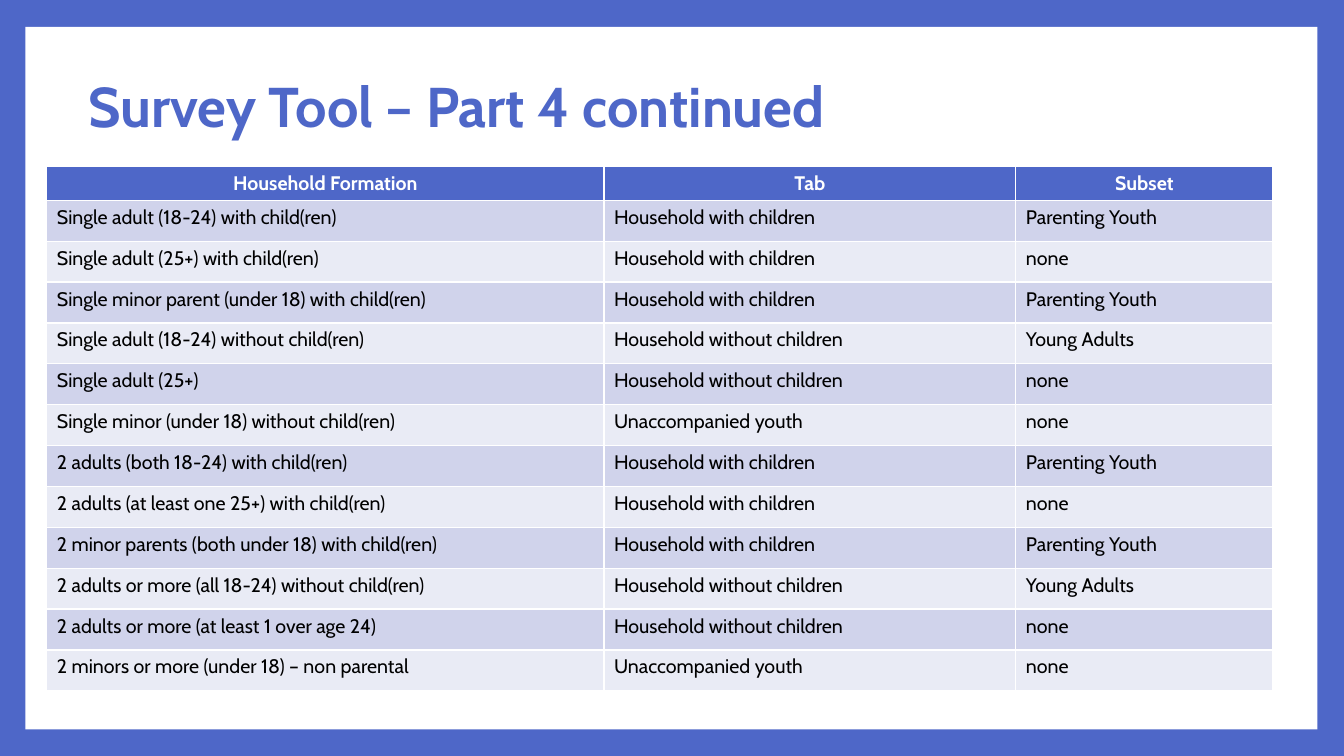
from pptx import Presentation
from pptx.dml.color import RGBColor
from pptx.enum.shapes import MSO_SHAPE
from pptx.enum.text import MSO_ANCHOR, PP_ALIGN
from pptx.util import Cm, Pt

TITLE = "Survey Tool – Part 4 continued"
HEADERS = ("Household Formation", "Tab", "Subset")
WITH, WITHOUT, ALONE = "Household with children", "Household without children", "Unaccompanied youth"
HOUSEHOLDS = [
    ("Single adult (18-24) with child(ren)", WITH, "Parenting Youth"),
    ("Single adult (25+) with child(ren)", WITH, "none"),
    ("Single minor parent (under 18) with child(ren)", WITH, "Parenting Youth"),
    ("Single adult (18-24) without child(ren)", WITHOUT, "Young Adults"),
    ("Single adult (25+)", WITHOUT, "none"),
    ("Single minor (under 18) without child(ren)", ALONE, "none"),
    ("2 adults (both 18-24) with child(ren)", WITH, "Parenting Youth"),
    ("2 adults (at least one 25+) with child(ren)", WITH, "none"),
    ("2 minor parents (both under 18) with child(ren)", WITH, "Parenting Youth"),
    ("2 adults or more (all 18-24) without child(ren)", WITHOUT, "Young Adults"),
    ("2 adults or more (at least 1 over age 24)", WITHOUT, "none"),
    ("2 minors or more (under 18) – non parental", ALONE, "none"),
]
FONT, BLUE, WHITE, BLACK = "Cabin", "4E67C8", "FFFFFF", "000000"
BANDS = ("D0D3EB", "E9EBF5")
COL_WIDTHS = (14.04, 10.38, 6.48)
HEADER_HEIGHT, ROW_HEIGHT = 0.83, 1.03


def paint(fill, color):
    fill.solid()
    fill.fore_color.rgb = RGBColor.from_string(color)


def style(p, size, color, bold):
    p.font.name, p.font.size, p.font.bold = FONT, Pt(size), bold
    paint(p.font.fill, color)


def add_panel(s):
    sp = s.shapes.add_shape(MSO_SHAPE.RECTANGLE, Cm(0.64), Cm(0.68), Cm(32.56), Cm(17.7))
    sp.shadow.inherit = False
    paint(sp.fill, WHITE)
    sp.line.fill.background()


def add_title(s):
    tf = s.shapes.add_textbox(Cm(1.98), Cm(1.7), Cm(24.84), Cm(2.11)).text_frame
    tf.word_wrap = True
    tf.vertical_anchor = MSO_ANCHOR.MIDDLE
    p = tf.paragraphs[0]
    p.text = TITLE
    p.line_spacing = 0.9
    style(p, 40, BLUE, True)


def add_households(s):
    rows = [HEADERS] + HOUSEHOLDS
    height = HEADER_HEIGHT + ROW_HEIGHT * len(HOUSEHOLDS)
    table = s.shapes.add_table(len(rows), len(HEADERS), Cm(1.18), Cm(4.2),
                               Cm(sum(COL_WIDTHS)), Cm(height)).table
    for column, width in zip(table.columns, COL_WIDTHS):
        column.width = Cm(width)
    for i, row in enumerate(rows):
        header = i == 0
        table.rows[i].height = Cm(HEADER_HEIGHT if header else ROW_HEIGHT)
        for j, text in enumerate(row):
            cell = table.cell(i, j)
            paint(cell.fill, BLUE if header else BANDS[(i - 1) % 2])
            p = cell.text_frame.paragraphs[0]
            p.text = text
            p.alignment = PP_ALIGN.CENTER if header else PP_ALIGN.LEFT
            style(p, 14, WHITE if header else BLACK, header)


def main():
    prs = Presentation()
    prs.slide_width, prs.slide_height = Cm(33.87), Cm(19.05)
    s = prs.slides.add_slide(prs.slide_layouts[6])
    paint(s.background.fill, BLUE)
    add_panel(s)
    add_title(s)
    add_households(s)
    prs.save("out.pptx")


if __name__ == "__main__":
    main()
